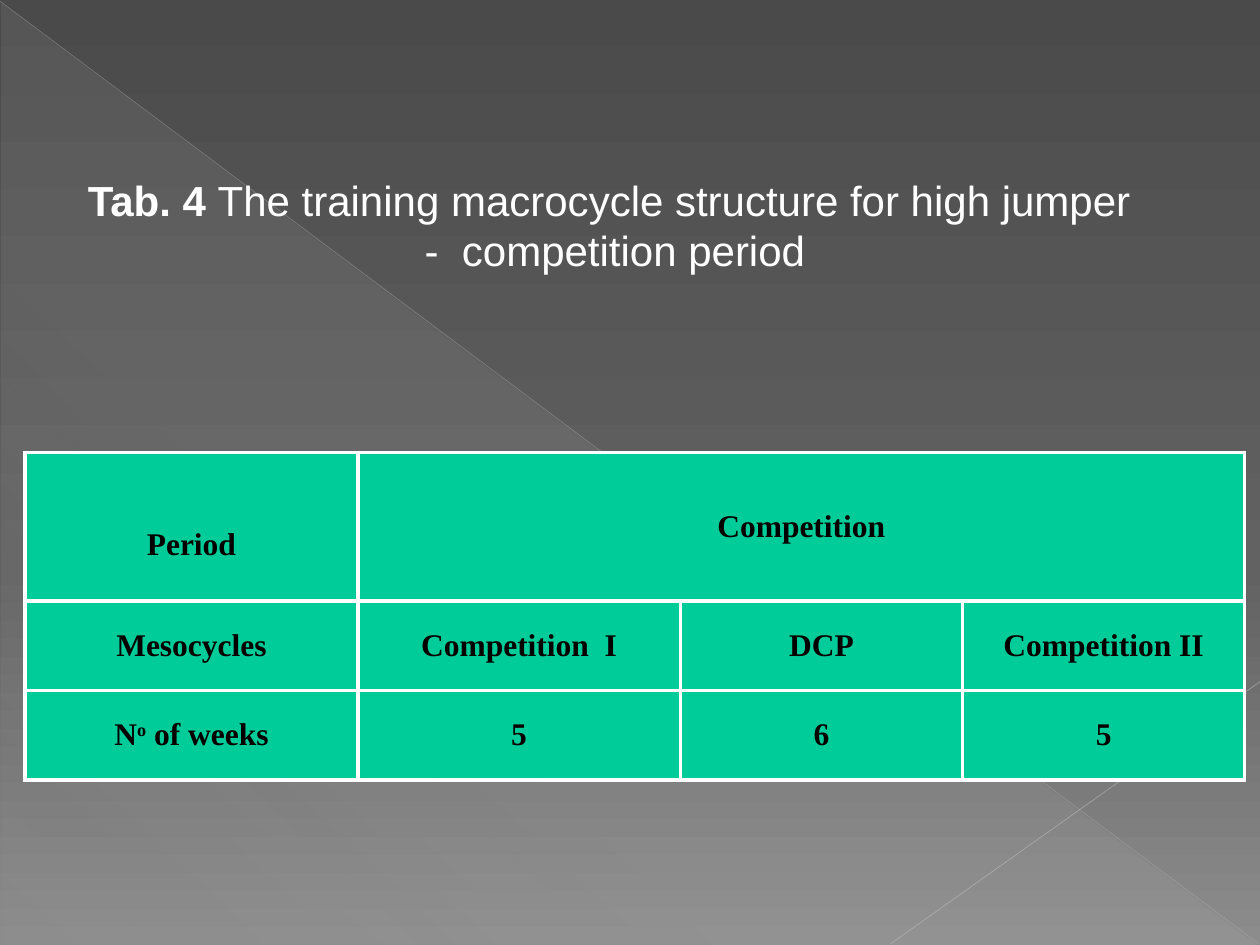
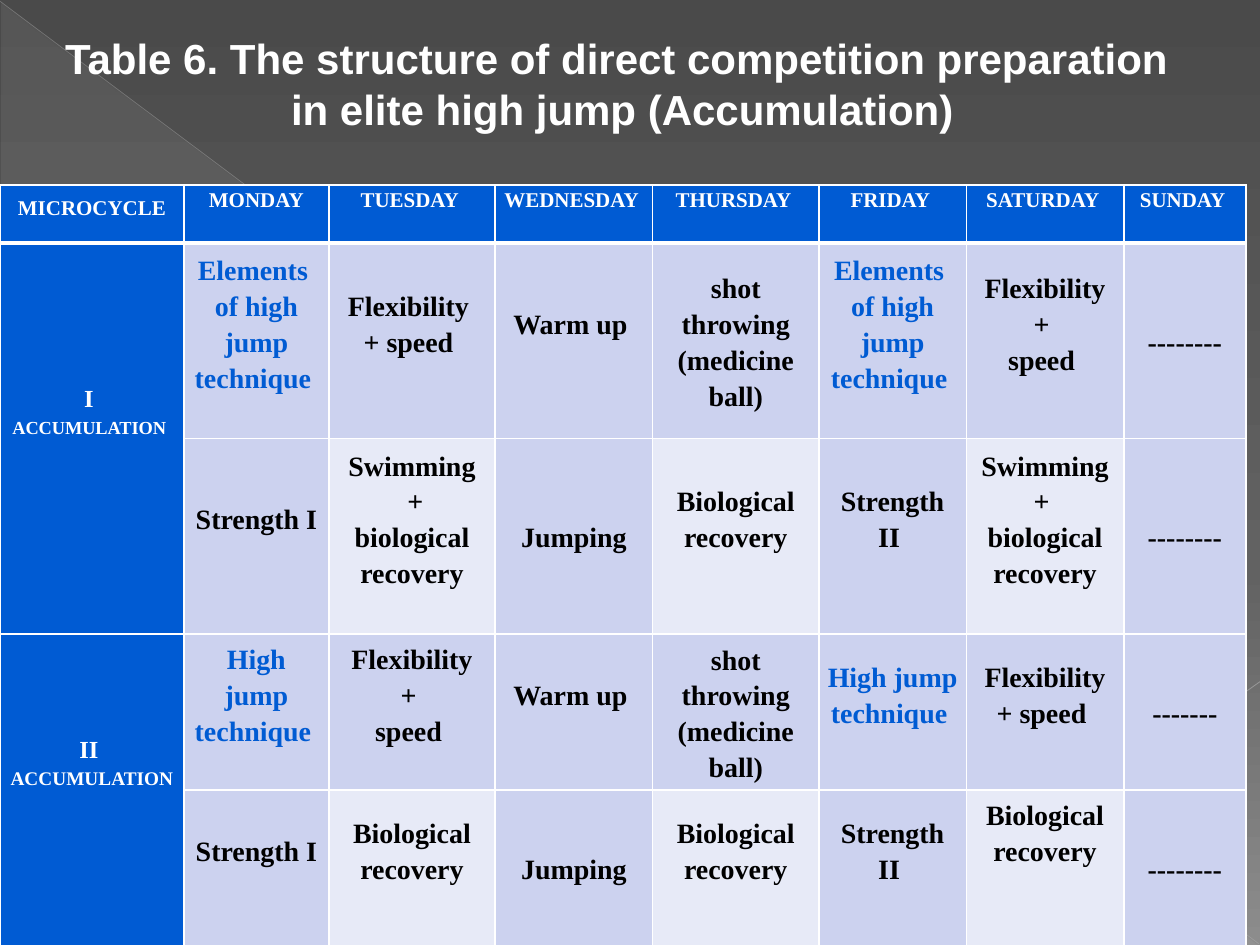
from pptx import Presentation
from pptx.dml.color import RGBColor
from pptx.enum.shapes import MSO_CONNECTOR, MSO_SHAPE
from pptx.enum.text import MSO_ANCHOR, MSO_AUTO_SIZE, PP_ALIGN
from pptx.oxml import parse_xml
from pptx.oxml.ns import nsdecls, qn
from pptx.util import Inches, Pt

WHITE = RGBColor(0xFF, 0xFF, 0xFF)
BLACK = RGBColor(0, 0, 0)
GREEN = RGBColor(0x00, 0xCC, 0x99)
BLUE = RGBColor(0x00, 0x5B, 0xD3)
LILAC = RGBColor(0xCC, 0xD2, 0xEF)
PALE = RGBColor(0xE7, 0xEA, 0xF7)
SILVER = RGBColor(0xD2, 0xD2, 0xD2)
BACK = [(0, RGBColor(0x4A, 0x4A, 0x4A), 100), (60, RGBColor(0x62, 0x62, 0x62), 100),
        (100, RGBColor(0x8C, 0x8C, 0x8C), 100)]
SHEEN = [(0, SILVER, 10), (70, SILVER, 8), (100, SILVER, 1)]
RAYS = [((0, 0.01), (9.99, 7.49), RGBColor(0xBF, 0xBF, 0xBF), 0.39, 35),
        ((10, 5.41), (7.07, 7.49), RGBColor(0xC6, 0xC6, 0xC6), 0.47, 45)]
SANS = "Arial"
SERIF = "Times New Roman"
BLANK = 0.29

DAYS = ["MONDAY", "TUESDAY ", "WEDNESDAY ", "THURSDAY ", "FRIDAY ", "SATURDAY ", "SUNDAY "]
DRILL = ("Elements  of high jump technique ", 1)
SHOT = ("shot throwing (medicine ball)", 0)
WARM = ("Warm up ", 1)
JUMP = ("Jumping", 0)
REST = ("Biological recovery", 1)
FIRST = ("Strength I ", 1)
SECOND = ("Strength II ", 1)
OFF = ("--------", 0)
WEEKS = [
    [DRILL, ("Flexibility \n+ speed ", 1), WARM, SHOT, DRILL,
     ("Flexibility + \nspeed ", 1), OFF],
    [FIRST, ("Swimming\n +\nbiological recovery", 1), JUMP, REST, SECOND,
     ("Swimming +  biological recovery", 1), OFF],
    [("High\njump technique ", 1), ("Flexibility\n+ \nspeed ", 1), WARM, SHOT,
     ("High jump technique ", 1), ("Flexibility + speed ", 1), ("-------", 0)],
    [FIRST, REST, JUMP, REST, SECOND, ("Biological recovery", 2), OFF],
]


class Deck:
    def __init__(self):
        self.prs = Presentation()
        self.prs.slide_width = Inches(10)
        self.prs.slide_height = Inches(7.5)
        self.slide = None

    def add(self):
        self.slide = self.prs.slides.add_slide(self.prs.slide_layouts[5])

    def blend(self, fill, root, stops, angle):
        fill.gradient()
        old = next(root.iter(qn("a:gradFill")))
        marks = "".join(
            f'<a:gs pos="{pos * 1000}"><a:srgbClr val="{color}">'
            f'<a:alpha val="{alpha * 1000}"/></a:srgbClr></a:gs>'
            for pos, color, alpha in stops)
        new = parse_xml(f'<a:gradFill {nsdecls("a")} rotWithShape="1"><a:gsLst>{marks}</a:gsLst>'
                        f'<a:lin ang="{angle * 60000}" scaled="0"/></a:gradFill>')
        old.getparent().replace(old, new)

    def ray(self, start, end, color, width, alpha):
        line = self.slide.shapes.add_connector(
            MSO_CONNECTOR.STRAIGHT, *map(Inches, start + end))
        line.line.color.rgb = color
        line.line.width = Pt(width)
        tint = next(line._element.iter(qn("a:srgbClr")))
        tint.append(parse_xml(f'<a:alpha {nsdecls("a")} val="{alpha * 1000}"/>'))
        line._element.spPr.append(parse_xml(f'<a:effectLst {nsdecls("a")}/>'))
        return line

    def backdrop(self):
        master = self.prs.slide_master
        self.blend(master.background.fill, master._element, BACK, 90)
        wedge = self.slide.shapes.add_shape(
            MSO_SHAPE.RIGHT_TRIANGLE, *map(Inches, (0.01, 0.02, 9.98, 7.48)))
        wedge.shadow.inherit = False
        wedge.line.fill.background()
        self.blend(wedge.fill, wedge._element, SHEEN, 133)
        parts = [wedge] + [self.ray(*ray) for ray in RAYS]
        for step, part in enumerate(parts):
            next(part._element.iter(qn("p:cNvPr"))).set("id", str(20 + step))
            master.shapes._spTree.insert(2 + step, part._element)

    def text(self, frame, lines, font, space=1.0):
        frame.word_wrap = True
        for index, runs in enumerate(lines):
            para = frame.paragraphs[0] if index == 0 else frame.add_paragraph()
            para.alignment = PP_ALIGN.CENTER
            para.line_spacing = space
            for words, size, color, bold, *lift in runs:
                if words == "\v":
                    para.add_line_break()
                    continue
                run = para.add_run()
                run.text = words
                run.font.name = font
                run.font.size = Pt(size)
                run.font.bold = bold
                run.font.color.rgb = color
                if lift:
                    run.font._element.set("baseline", str(lift[0] * 1000))

    def title(self, box, runs, anchor, below=0.05):
        shape = self.slide.shapes.title
        shape.left, shape.top, shape.width, shape.height = map(Inches, box)
        frame = shape.text_frame
        frame.auto_size = MSO_AUTO_SIZE.NONE
        frame.vertical_anchor = anchor
        frame.margin_bottom = Inches(below)
        self.text(frame, [[(words, 24, WHITE, bold) for words, bold in runs]], SANS)

    def table(self, left, top, cols, rows, edge):
        frame = self.slide.shapes.add_table(
            len(rows), len(cols), *map(Inches, (left, top, sum(cols), sum(rows))))
        grid = frame.table
        grid.first_row = grid.horz_banding = False
        for col, width in zip(grid.columns, cols):
            col.width = Inches(width)
        for row, height in zip(grid.rows, rows):
            row.height = Inches(height)
        for r in range(len(rows)):
            for c in range(len(cols)):
                self.border(grid.cell(r, c), *edge(r))
        return grid

    def border(self, cell, top, bottom, side):
        props = cell._tc.get_or_add_tcPr()
        for index, (name, width) in enumerate(zip("LRTB", (side, side, top, bottom))):
            props.insert(index, parse_xml(
                f'<a:ln{name} {nsdecls("a")} w="{int(Pt(width))}"><a:solidFill>'
                f'<a:srgbClr val="{WHITE}"/></a:solidFill></a:ln{name}>'))

    def cell(self, cell, lines, fill, anchor=MSO_ANCHOR.MIDDLE,
             pad=(0.07, 0, 0.07, 0), space=1.15):
        cell.fill.solid()
        cell.fill.fore_color.rgb = fill
        cell.vertical_anchor = anchor
        (cell.margin_left, cell.margin_top,
         cell.margin_right, cell.margin_bottom) = map(Inches, pad)
        self.text(cell.text_frame, lines, SERIF, space)


def cycle(deck):
    deck.title((0.47, 1.33, 8.82, 1.31),
               [("Tab. 4 ", True), ("The training macrocycle structure for high jumper ", False),
                ("\v", False), ("-  competition period", False)],
               MSO_ANCHOR.MIDDLE, 0.45)
    grid = deck.table(0.2, 3.59, [2.64, 2.56, 2.24, 2.24], [1.18, 0.71, 0.71],
                      lambda row: (2.25, 2.25, 2.25))
    grid.cell(0, 1).merge(grid.cell(0, 3))
    texts = [["Period", "Competition"],
             ["Mesocycles", "Competition  I", "DCP", "Competition II"],
             [None, "5", "6", "5"]]
    for r, row in enumerate(texts):
        for c, words in enumerate(row):
            runs = [(words, 18, BLACK, True)]
            if words is None:
                runs = [("N", 18, BLACK, True), ("o", 18, BLACK, True, 30),
                        (" of weeks", 18, BLACK, True)]
            above = 0.05 + BLANK if words == "Period" else 0.05
            deck.cell(grid.cell(r, c), [runs], GREEN,
                      pad=(0.1, above, 0.1, 0.05), space=1.0)


def plan(deck):
    grid = deck.table(0, 1.47, [1.46, 1.15, 1.32, 1.25, 1.32, 1.17, 1.25, 0.97],
                      [0.46, 1.55, 1.55, 1.24, 1.24],
                      lambda row: (3 if row == 1 else 1, 3 if row == 0 else 1, 1))
    for c, day in enumerate(["MICROCYCLE"] + DAYS):
        deck.cell(grid.cell(0, c), [[(day, 12, WHITE, True)]], BLUE, MSO_ANCHOR.TOP,
                  space=1.15 if c else 1.5)
    for r, mark, size in [(1, "I ", 10.5), (3, "II ", 11)]:
        grid.cell(r, 0).merge(grid.cell(r + 1, 0))
        deck.cell(grid.cell(r, 0),
                  [[(mark, 14, WHITE, True)],
                   [("ACCUMULATION", size, WHITE, True), (" ", 12, WHITE, True)]],
                  BLUE, pad=(0.07, 0, 0.07, 0.45))
    for r, week in enumerate(WEEKS, 1):
        for c, (words, blanks) in enumerate(week, 1):
            color = BLUE if "technique" in words else BLACK
            fill = PALE if r % 2 == 0 and c in (2, 4, 6) else LILAC
            deck.cell(grid.cell(r, c),
                      [[(line, 16, color, True)] for line in words.split("\n")],
                      fill, pad=(0.07, 0, 0.07, blanks * BLANK))
    deck.title((0, 0.21, 9.88, 0.91),
               [("Table 6. The structure of direct competition preparation ", True),
                ("\v", True), ("in elite high jump (Accumulation)", True)], MSO_ANCHOR.TOP)


def main():
    deck = Deck()
    deck.add()
    deck.backdrop()
    cycle(deck)
    deck.add()
    plan(deck)
    deck.prs.save("out.pptx")


if __name__ == "__main__":
    main()
